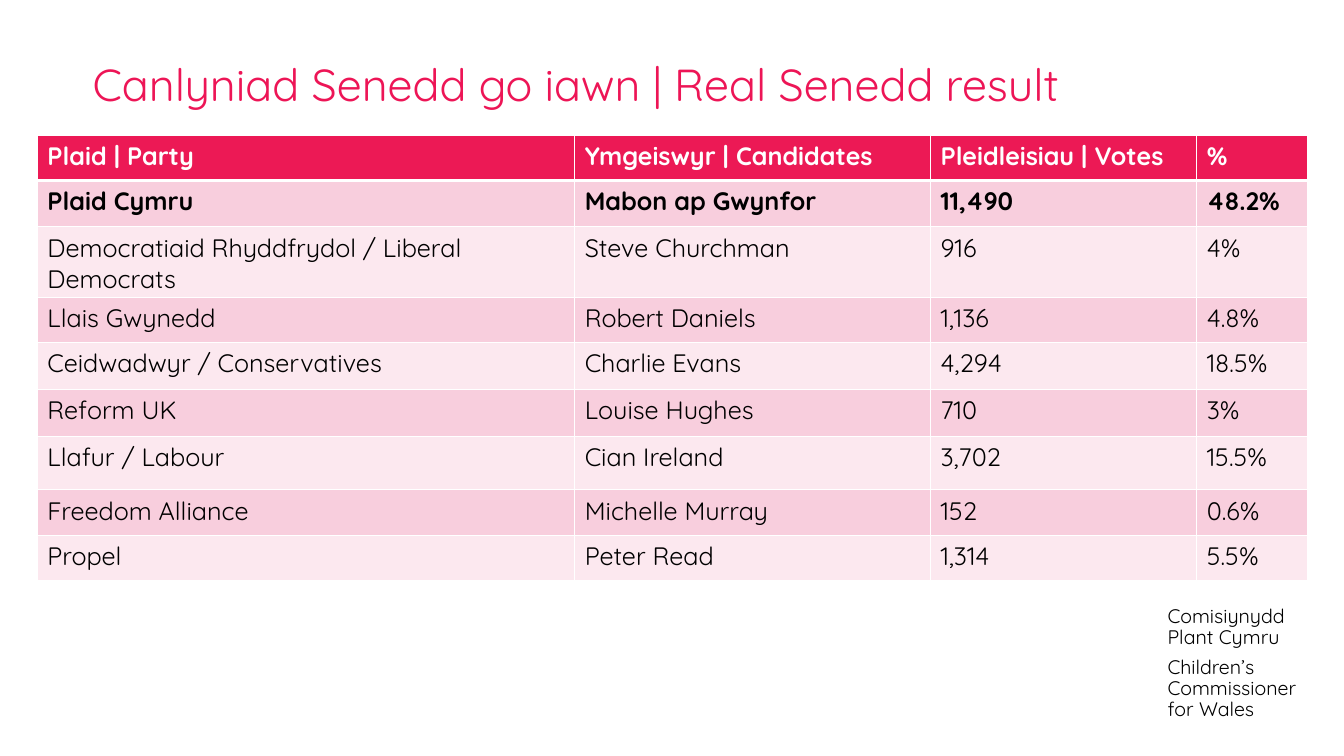
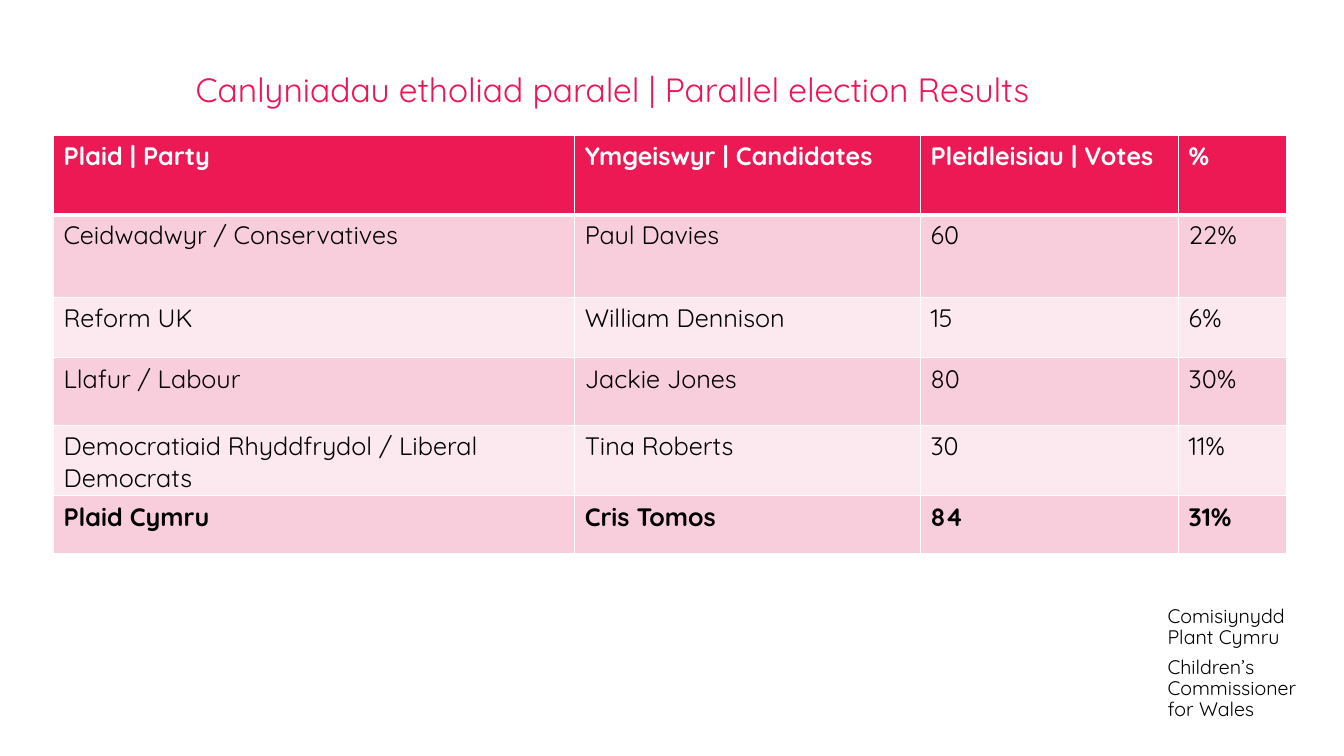
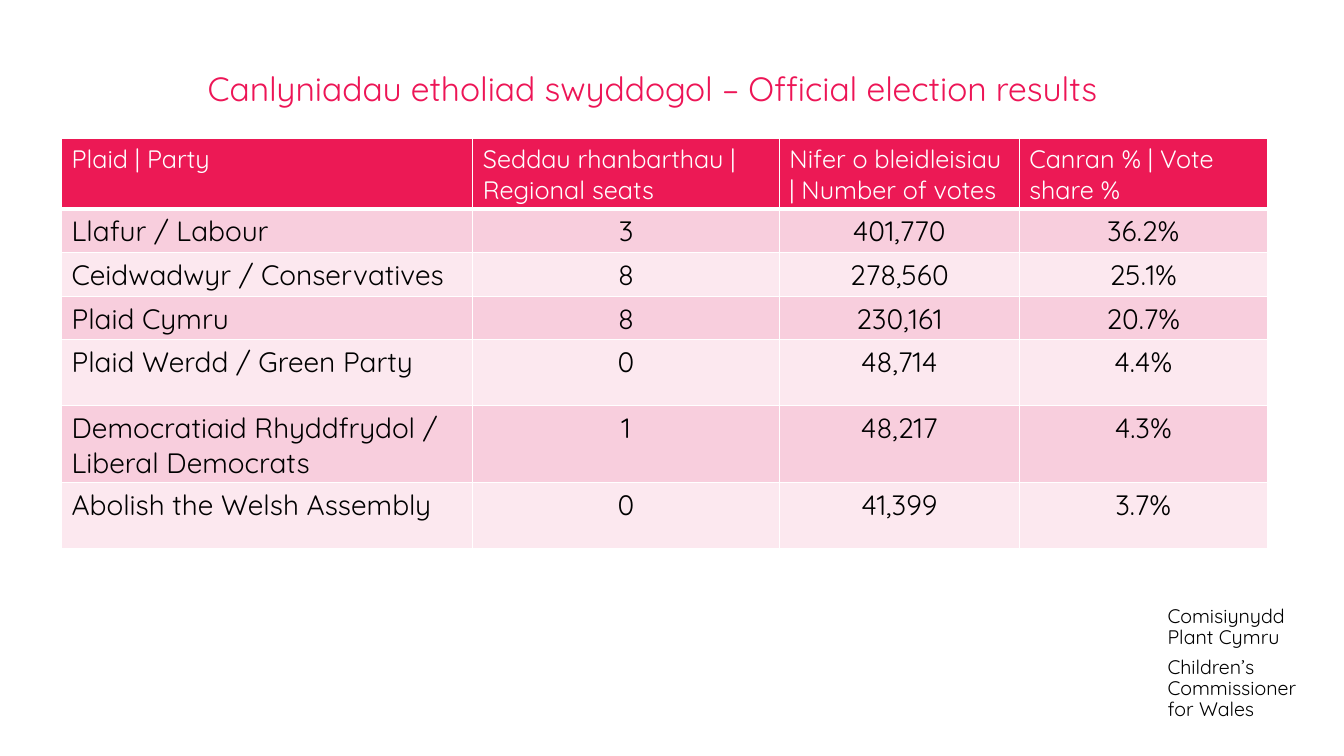
from lxml import etree
from pptx import Presentation
from pptx import util as u
from pptx.dml import color
from pptx.enum import text
from pptx.oxml import ns

WHITE, BLACK, TITLE_PINK, HEADER_PINK = "FFFFFF", "000000", "ED1556", "EC1955"
BANDS = ("F8CEDD", "FCE8EF")
LIBERAL_DEMOCRATS = "Democratiaid Rhyddfrydol / Liberal Democrats"
CONSERVATIVES = "Ceidwadwyr / Conservatives"
LABOUR = "Llafur / Labour"
PLAID_CYMRU = "Plaid Cymru"
CANDIDATE_HEADINGS = ("Plaid | Party", "Ymgeiswyr | Candidates", "Pleidleisiau | Votes", "%")


def rgb(hex_colour):
    """Turn a hex string into a colour."""
    return color.RGBColor.from_string(hex_colour)


class ResultsDeck:
    """Hold the deck style and the slide being built."""

    font_name = "Quicksand"

    def __init__(self):
        """Open an empty widescreen presentation."""
        self.deck = Presentation()
        self.deck.slide_width = u.Inches(13.33)
        self.deck.slide_height = u.Inches(7.5)
        self.slide = None

    def new_slide(self):
        """Start a blank slide with the commissioner's name."""
        self.slide = self.deck.slides.add_slide(self.deck.slide_layouts[6])
        self.text_box(
            (11.58, 6.01, 1.38, 1.15),
            ("Comisiynydd\vPlant Cymru", "Children’s\vCommissioner\vfor Wales"),
            14, BLACK, text.MSO_ANCHOR.MIDDLE)

    def style(self, paragraph, size, colour, bold=False):
        """Set the font of a whole paragraph."""
        font = paragraph.font
        font.name, font.size, font.bold = self.font_name, u.Pt(size), bold
        font.color.rgb = rgb(colour)

    def text_box(self, place, lines, size, colour, anchor=text.MSO_ANCHOR.TOP):
        """Add a text box without margins, one paragraph per line."""
        frame = self.slide.shapes.add_textbox(*map(u.Inches, place)).text_frame
        frame.word_wrap = True
        frame.vertical_anchor = anchor
        frame.margin_left = frame.margin_right = frame.margin_top = frame.margin_bottom = 0
        for index, line in enumerate(lines):
            paragraph = frame.add_paragraph() if index else frame.paragraphs[0]
            paragraph.text = line
            paragraph.line_spacing = 0.9
            if index < len(lines) - 1:
                paragraph.space_after = u.Pt(6)
            self.style(paragraph, size, colour)

    def title(self, place, wording, size=24):
        """Add the slide title."""
        self.text_box(place, (wording,), size, TITLE_PINK)

    def borders(self, cell, top, bottom):
        """Draw white cell borders with the given top and bottom widths."""
        properties = cell._tc.get_or_add_tcPr()
        for side, width in (("L", 1), ("R", 1), ("T", top), ("B", bottom)):
            line = etree.SubElement(properties, ns.qn("a:ln" + side), w=str(u.Pt(width)))
            fill = etree.SubElement(line, ns.qn("a:solidFill"))
            etree.SubElement(fill, ns.qn("a:srgbClr"), val=WHITE)

    def results(self, left, top, widths, heights, rows, size=18,
                header_bold=True, winner=None, centred=False):
        """Add a banded results table under a header row."""
        table = self.slide.shapes.add_table(
            len(rows), len(widths), u.Inches(left), u.Inches(top),
            u.Inches(sum(widths)), u.Inches(sum(heights))).table
        table.first_row = table.horz_banding = False
        for column, width in zip(table.columns, widths):
            column.width = u.Inches(width)
        for r, (values, height) in enumerate(zip(rows, heights)):
            table.rows[r].height = u.Inches(height)
            header = r == 0
            for c, value in enumerate(values):
                cell = table.cell(r, c)
                self.borders(cell, 3 if r == 1 else 1, 3 if header else 1)
                cell.fill.solid()
                cell.fill.fore_color.rgb = rgb(HEADER_PINK if header else BANDS[(r - 1) % 2])
                paragraph = cell.text_frame.paragraphs[0]
                paragraph.text = value
                if centred and c and not header:
                    paragraph.alignment = text.PP_ALIGN.CENTER
                if header:
                    self.style(paragraph, 18, WHITE, header_bold)
                else:
                    self.style(paragraph, size, BLACK, values[0] == winner)


def main():
    """Build the three results slides."""
    deck = ResultsDeck()

    deck.new_slide()
    deck.title((0.92, 0.62, 11.84, 0.48), "Canlyniad Senedd go iawn | Real Senedd result", 32)
    deck.results(
        0.37, 1.34, (5.33, 3.53, 2.64, 1.1),
        (0.45, 0.46, 0.49, 0.45, 0.46, 0.47, 0.53, 0.45, 0.45),
        (CANDIDATE_HEADINGS,
         (PLAID_CYMRU, "Mabon ap Gwynfor", "11,490", "48.2%"),
         (LIBERAL_DEMOCRATS, "Steve Churchman", "916", "4%"),
         ("Llais Gwynedd", "Robert Daniels", "1,136", "4.8%"),
         (CONSERVATIVES, "Charlie Evans", "4,294", "18.5%"),
         ("Reform UK", "Louise Hughes", "710", "3%"),
         (LABOUR, "Cian Ireland", "3,702", "15.5%"),
         ("Freedom Alliance", "Michelle Murray", "152", "0.6%"),
         ("Propel", "Peter Read", "1,314", "5.5%")),
        winner=PLAID_CYMRU)

    deck.new_slide()
    deck.title((1.94, 0.73, 9.41, 0.76), "Canlyniadau etholiad paralel | Parallel election Results")
    deck.results(
        0.53, 1.34, (5.17, 3.43, 2.56, 1.07), (0.79, 0.82, 0.6, 0.67, 0.56, 0.57),
        (CANDIDATE_HEADINGS,
         (CONSERVATIVES, "Paul Davies", "60", "22%"),
         ("Reform UK", "William Dennison", "15", "6%"),
         (LABOUR, "Jackie Jones", "80", "30%"),
         (LIBERAL_DEMOCRATS, "Tina Roberts", "30", "11%"),
         (PLAID_CYMRU, "Cris Tomos", "84", "31%")),
        winner=PLAID_CYMRU)

    deck.new_slide()
    deck.title((2.06, 0.72, 10.26, 0.91), "Canlyniadau etholiad swyddogol – Official election results")
    deck.results(
        0.61, 1.37, (4.08, 3.04, 2.38, 2.46), (0.65, 0.4, 0.4, 0.4, 0.65, 0.72, 0.65),
        (("Plaid | Party", "Seddau rhanbarthau | Regional seats",
          "Nifer o bleidleisiau | Number of votes", "Canran % | Vote share %"),
         (LABOUR, "3", "401,770", "36.2%"),
         (CONSERVATIVES, "8", "278,560", "25.1%"),
         (PLAID_CYMRU, "8", "230,161", "20.7%"),
         ("Plaid Werdd / Green Party", "0", "48,714", "4.4%"),
         (LIBERAL_DEMOCRATS, "1", "48,217", "4.3%"),
         ("Abolish the Welsh Assembly", "0", "41,399", "3.7%")),
        size=20, header_bold=False, centred=True)

    deck.deck.save("out.pptx")


if __name__ == "__main__":
    main()
